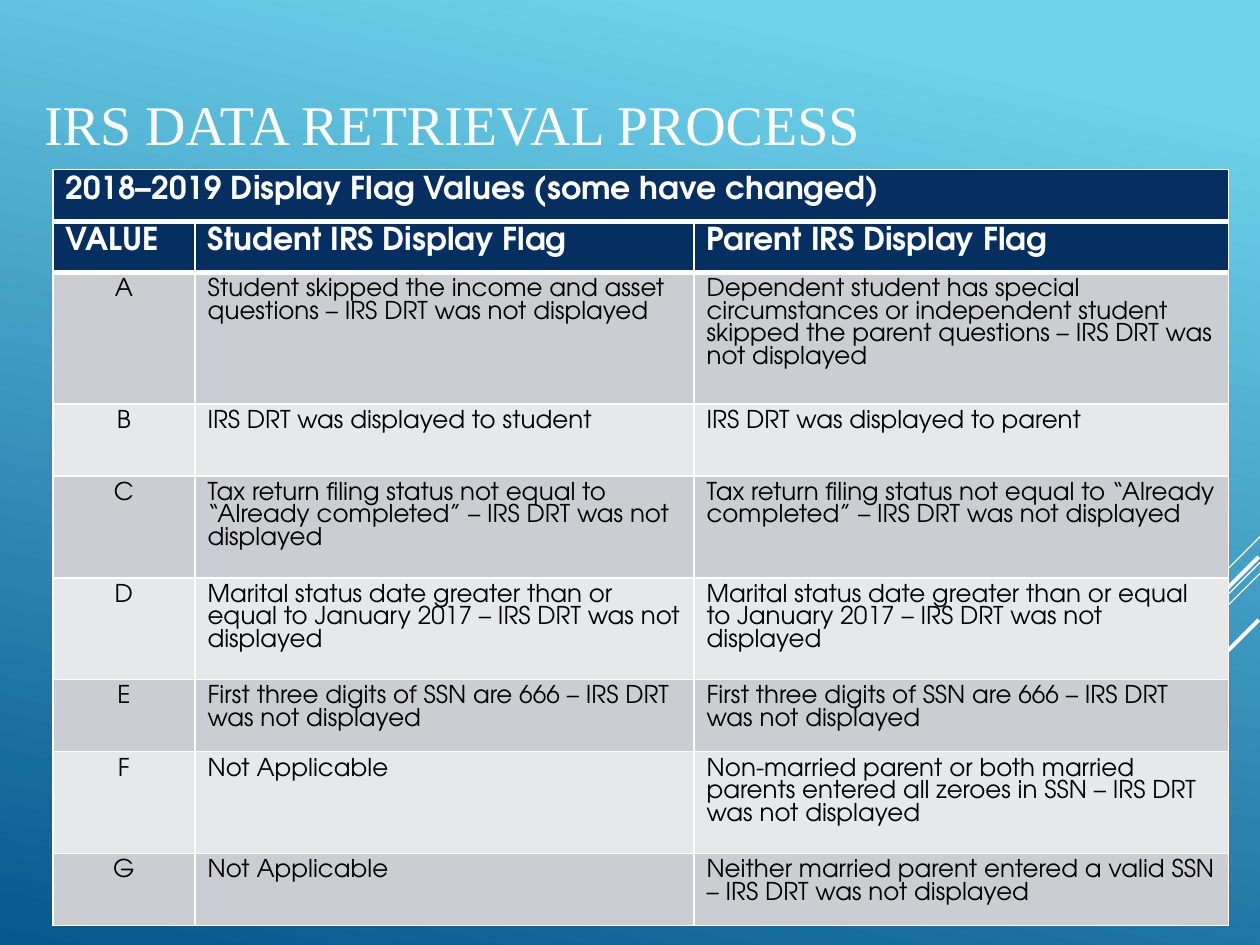
from lxml import etree
from pptx import Presentation
from pptx.dml import color
from pptx.enum import shapes, text
from pptx.oxml import ns
from pptx.util import Pt

WHITE, NAVY, BLACK = "FFFFFF", "052F61", "000000"
BANDS = ("CCCDD2", "E7E8EA")
TABLE_FONT = "TeX Gyre Adventor"
COLUMN_WIDTHS = (81.2, 285.2, 305.4)
HEADER_HEIGHT = 29.4
CELL_PADDING, LINE_HEIGHT = 7.2, 17

HEADINGS = ("VALUE", "Student IRS Display Flag", "Parent IRS Display Flag")
UNCOMPLETED = "Tax return filing status not equal to “Already completed” – IRS DRT was not displayed"
MARITAL = "Marital status date greater than or equal to January 2017 – IRS DRT was not displayed"
SSN_DIGITS = "First three digits of SSN are 666 – IRS DRT was not displayed"
FLAGS = (
    ("A", "Student skipped the income and asset questions – IRS DRT was not displayed",
     "Dependent student has special circumstances or independent student "
     "skipped the parent questions – IRS DRT was not displayed", 4),
    ("B", "IRS DRT was displayed to student", "IRS DRT was displayed to parent", 2),
    ("C", UNCOMPLETED, UNCOMPLETED, 3),
    ("D", MARITAL, MARITAL, 3),
    ("E", SSN_DIGITS, SSN_DIGITS, 2),
    ("F", "Not Applicable",
     "Non-married parent or both married parents entered all zeroes in SSN "
     "– IRS DRT was not displayed", 3),
    ("G", "Not Applicable",
     "Neither married parent entered a valid SSN – IRS DRT was not displayed", 2),
)
STREAKS = (
    (720, 306.7, 59.8, 0.75),
    (720, 321.4, 194.6, 0.75),
    (720, 327.6, 123.8, 0.75),
    (719.3, 318.2, 113, 2.25),
    (719.3, 354.2, 82.1, 2.25),
)


def rgb(value):
    return color.RGBColor.from_string(value)


def paint_background(page):
    fill = page.background.fill
    fill.gradient()
    fill.gradient_angle = 258
    for stop, position, value in zip(fill.gradient_stops, (0.1, 1), ("6ED2EB", "06588E")):
        stop.position = position
        stop.color.rgb = rgb(value)


def add_streaks(page):
    for right, top, span, width in STREAKS:
        streak = page.shapes.add_connector(
            shapes.MSO_CONNECTOR.STRAIGHT,
            Pt(right), Pt(top), Pt(right - span), Pt(top + span))
        streak.line.color.rgb = rgb(WHITE)
        streak.line.width = Pt(width)
        etree.SubElement(streak._element.spPr, ns.qn("a:effectLst"))


def set_title(page, left, top, width, height):
    title = page.shapes.title
    title.left, title.top, title.width, title.height = map(Pt, (left, top, width, height))
    frame = title.text_frame
    frame.text = "IRS DATA RETRIEVAL PROCESS"
    frame.vertical_anchor = text.MSO_ANCHOR.MIDDLE
    para = frame.paragraphs[0]
    para.alignment = text.PP_ALIGN.LEFT
    para.font.name = "Times New Roman"
    para.font.size = Pt(32)
    para.font.color.rgb = rgb(WHITE)


def set_borders(cell, top, bottom):
    properties = cell._tc.get_or_add_tcPr()
    for side, width in (("L", 1), ("R", 1), ("T", top), ("B", bottom)):
        border = etree.SubElement(properties, ns.qn(f"a:ln{side}"), w=str(Pt(width)))
        solid = etree.SubElement(border, ns.qn("a:solidFill"))
        etree.SubElement(solid, ns.qn("a:srgbClr"), val=WHITE)


def fill_cell(cell, wording, fill, heading, centered=False, top=1):
    set_borders(cell, top, 3 if heading else 1)
    cell.fill.solid()
    cell.fill.fore_color.rgb = rgb(fill)
    cell.text = wording
    para = cell.text_frame.paragraphs[0]
    para.alignment = text.PP_ALIGN.CENTER if centered else text.PP_ALIGN.LEFT
    para.font.name = TABLE_FONT
    para.font.size = Pt(18 if heading else 14)
    para.font.bold = heading
    para.font.color.rgb = rgb(WHITE if heading else BLACK)


def add_grid(page, left, top, widths, heights):
    frame = page.shapes.add_table(
        len(heights), len(widths), Pt(left), Pt(top), Pt(sum(widths)), Pt(sum(heights)))
    table = frame.table
    for column, width in zip(table.columns, widths):
        column.width = Pt(width)
    for row, height in zip(table.rows, heights):
        row.height = Pt(height)
    return table


def add_flag_table(page, left, top):
    heights = [HEADER_HEIGHT] + [CELL_PADDING + LINE_HEIGHT * flag[-1] for flag in FLAGS]
    table = add_grid(page, left, top, COLUMN_WIDTHS, heights)
    for column, heading in enumerate(HEADINGS):
        fill_cell(table.cell(0, column), heading, NAVY, True)
    for row, (*wordings, _) in enumerate(FLAGS, 1):
        for column, wording in enumerate(wordings):
            fill_cell(table.cell(row, column), wording, BANDS[(row - 1) % 2], False,
                      centered=column == 0, top=3 if row == 1 else 1)


def add_banner(page, left, top):
    table = add_grid(page, left, top, [sum(COLUMN_WIDTHS)], [HEADER_HEIGHT])
    fill_cell(table.cell(0, 0), "2018–2019 Display Flag Values (some have changed)", NAVY, True)


def main():
    deck = Presentation()
    deck.slide_width, deck.slide_height = Pt(720), Pt(540)
    page = deck.slides.add_slide(deck.slide_layouts.get_by_name("Title Only"))
    paint_background(page)
    add_streaks(page)
    set_title(page, 18, 25.2, 594, 90)
    add_flag_table(page, 30.2, 126.2)
    add_banner(page, 30.2, 97)
    deck.save("out.pptx")


if __name__ == "__main__":
    main()
